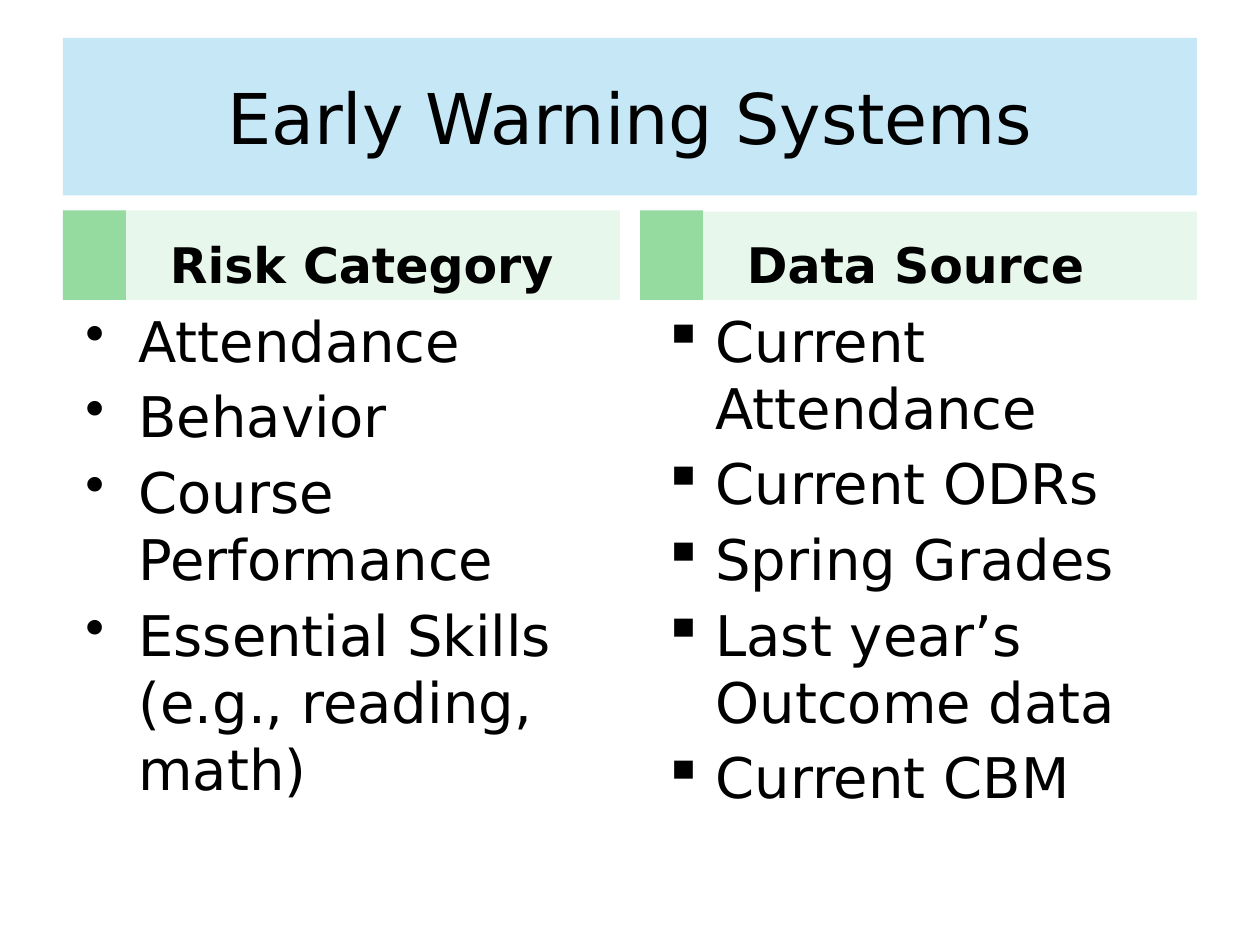
from lxml import etree
from pptx import Presentation
from pptx import util as u
from pptx.dml.color import RGBColor
from pptx.enum import shapes, text
from pptx.oxml.ns import qn

SKY = RGBColor(0xA9, 0xDC, 0xF2)
GREEN = RGBColor(0x95, 0xDA, 0x9F)
MINT = RGBColor(0xE8, 0xF7, 0xEB)
BLACK = RGBColor(0, 0, 0)
FONT = "DejaVu Sans"

# Grid in inches: two equal columns between the side margins
WIDTH, HEIGHT = 10, 7.5
MARGIN, GUTTER, TAB = 0.5, 0.16, 0.5
COLUMN = (WIDTH - 2 * MARGIN - GUTTER) / 2
TITLE_TOP, TITLE_HEIGHT = 0.3, 1.25
LIST_TOP, LIST_HEIGHT = 2.38, 4.32
TAB_TOP = 1.67

columns = [
    ("Risk Category", TAB_TOP, "•",
     ["Attendance", "Behavior", "Course Performance",
      "Essential Skills (e.g., reading, math)"]),
    ("Data Source", 1.68, "▪",
     ["Current Attendance", "Current ODRs", "Spring Grades",
      "Last year’s Outcome data", "Current CBM"]),
]

deck = Presentation()
deck.slide_width, deck.slide_height = u.Inches(WIDTH), u.Inches(HEIGHT)
slide = deck.slides.add_slide(deck.slide_layouts[6])


def add_block(left, top, width, height, fill=None):
    block = slide.shapes.add_shape(
        shapes.MSO_SHAPE.RECTANGLE,
        *(u.Inches(length) for length in (left, top, width, height)))
    block.shadow.inherit = False
    block.line.fill.background()
    if fill is None:
        block.fill.background()
    else:
        block.fill.solid()
        block.fill.fore_color.rgb = fill
    return block


def write(block, lines, size, anchor, align=text.PP_ALIGN.LEFT, bold=False,
          indent=None, space=0, bullet=None):
    frame = block.text_frame
    frame.word_wrap = True
    frame.vertical_anchor = anchor
    frame.text = "\n".join(lines)
    for number, paragraph in enumerate(frame.paragraphs):
        paragraph.alignment = align
        if number:
            paragraph.space_before = u.Pt(space)
        props = paragraph._p.get_or_add_pPr()
        if indent:
            props.set("marL", str(u.Inches(0.5)))
            props.set("indent", str(u.Inches(indent)))
        if bullet:
            etree.SubElement(props, qn("a:buChar")).set("char", bullet)
        for run in paragraph.runs:
            run.font.name, run.font.size = FONT, u.Pt(size)
            run.font.bold = bold
            run.font.color.rgb = BLACK


# Title band, partly transparent
title = add_block(MARGIN, TITLE_TOP, WIDTH - 2 * MARGIN, TITLE_HEIGHT, SKY)
tint = title.fill._xPr.find(qn("a:solidFill"))[0]
etree.SubElement(tint, qn("a:alpha")).set("val", "67000")
write(title, ["Early Warning Systems"], 40, text.MSO_ANCHOR.MIDDLE,
      text.PP_ALIGN.CENTER)

# Columns: green tab, heading, bulleted list
for index, (heading, heading_top, bullet, items) in enumerate(columns):
    left = MARGIN + index * (COLUMN + GUTTER)
    add_block(left, TAB_TOP, TAB, LIST_TOP - TAB_TOP, GREEN)
    header = add_block(left + TAB, heading_top, COLUMN - TAB,
                       LIST_TOP - heading_top, MINT)
    write(header, [heading], 28, text.MSO_ANCHOR.BOTTOM, bold=True,
          indent=-0.25)
    entries = add_block(left, LIST_TOP, COLUMN, LIST_HEIGHT)
    write(entries, items, 32, text.MSO_ANCHOR.TOP, indent=-0.42, space=4.8,
          bullet=bullet)

deck.save("out.pptx")
